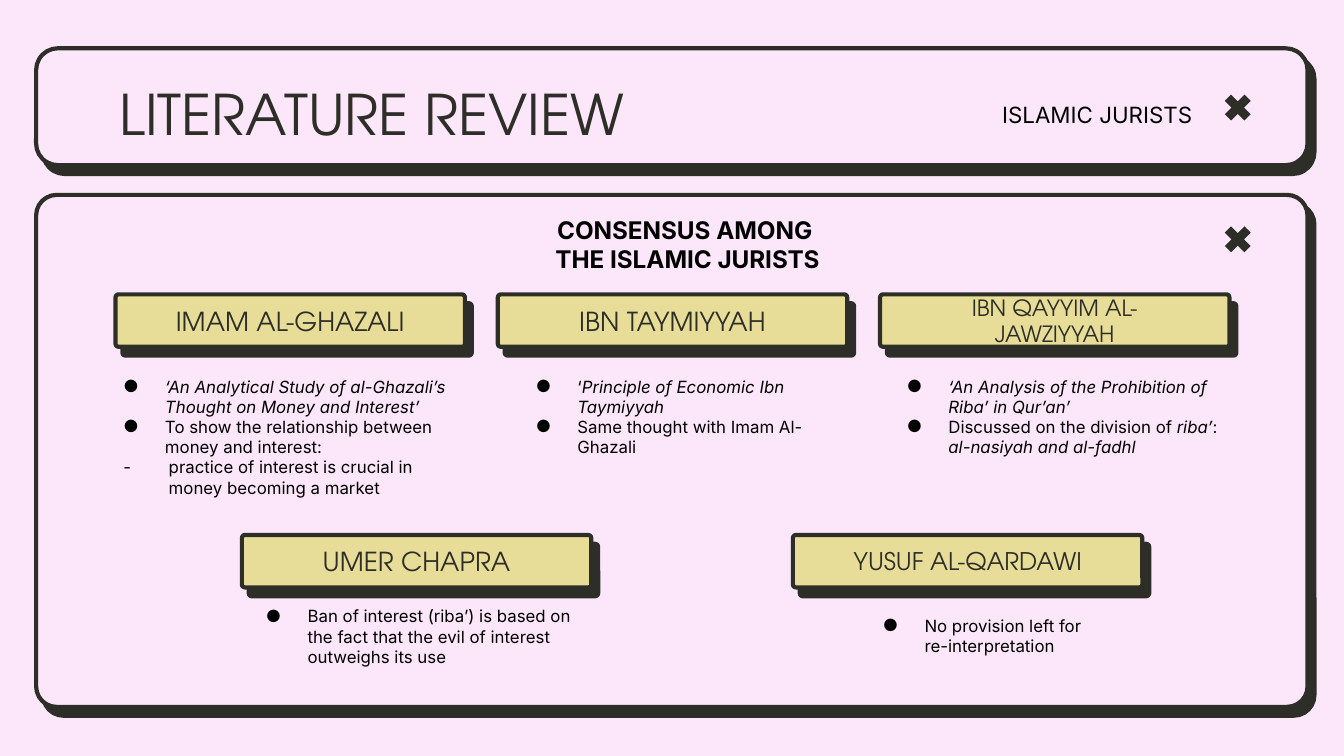
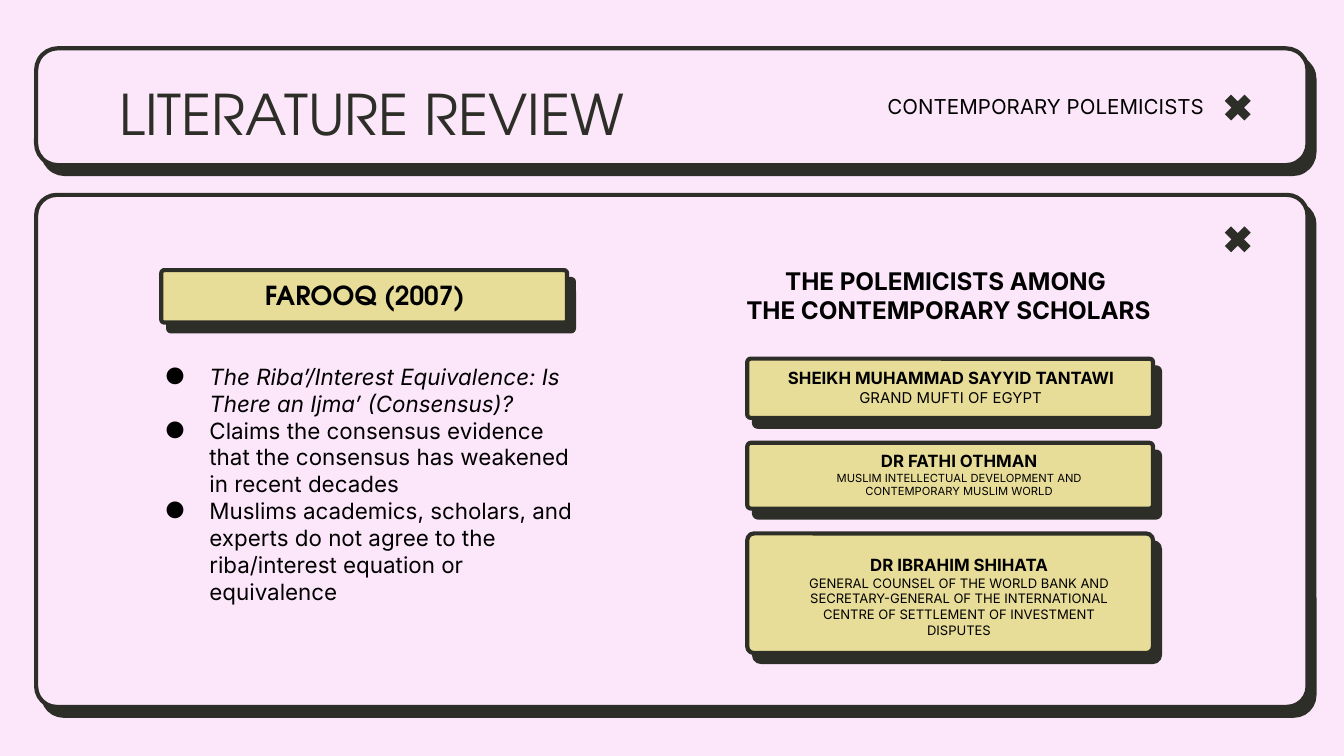
import pptx
import pptx.dml.color
import pptx.enum.shapes
import pptx.enum.text
import pptx.oxml
import pptx.oxml.ns
import pptx.util

Pt = pptx.util.Pt
SHAPES = pptx.enum.shapes.MSO_SHAPE
LEFT = pptx.enum.text.PP_ALIGN.LEFT
CENTER = pptx.enum.text.PP_ALIGN.CENTER
RIGHT = pptx.enum.text.PP_ALIGN.RIGHT
TOP = pptx.enum.text.MSO_ANCHOR.TOP
MIDDLE = pptx.enum.text.MSO_ANCHOR.MIDDLE

PINK, SAND, INK, BLACK = "FCE6FA", "E8DD98", "2D2E27", "000000"
DISPLAY, BODY = "TeX Gyre Adventor", "Inter"
NAMESPACE = pptx.oxml.ns.nsdecls("a")

HEADER_BOX = (19.4, 25.9, 681.1, 62.6)
CONTENT_BOX = (19.4, 104.4, 681.1, 274.3)
NAME_CARD = (187.2, 28.1)
WIDE_CARD = 217.4
COLUMN_STEP = 204.8
SCHOLAR_GAP = 13.3


def colour(code):
    return pptx.dml.color.RGBColor.from_string(code)


def add_shape(page, kind, box, fill, adjustment):
    shape = page.shapes.add_shape(kind, *[Pt(length) for length in box])
    shape.adjustments[0] = adjustment
    shape.fill.solid()
    shape.fill.fore_color.rgb = colour(fill)
    shape.line.fill.background()
    shape.shadow.inherit = False
    return shape


def add_card(page, box, fill=SAND, rounding=0.057):
    card = add_shape(page, SHAPES.ROUNDED_RECTANGLE, box, fill, rounding)
    card.line.color.rgb = colour(INK)
    card.line.width = Pt(2.25)
    effects = card._element.spPr.find(pptx.oxml.ns.qn("a:effectLst"))
    effects.append(pptx.oxml.parse_xml(
        f'<a:outerShdw {NAMESPACE} blurRad="0" dist="{Pt(6)}" dir="3120000" '
        f'algn="bl" rotWithShape="0"><a:srgbClr val="{INK}"/></a:outerShdw>'))


def add_panel(page, box, rounding, cross_drop):
    left, top = box[:2]
    add_card(page, box, PINK, rounding)
    add_shape(page, SHAPES.MATH_MULTIPLY,
              (left + 633.6, top + cross_drop, 20.2, 20.2), INK, 0.235)


def add_text_frame(page, box, anchor=TOP):
    frame = page.shapes.add_textbox(*[Pt(length) for length in box]).text_frame
    frame.word_wrap = True
    frame.vertical_anchor = anchor
    frame.margin_left = frame.margin_right = Pt(7.2)
    frame.margin_top = frame.margin_bottom = Pt(7.2)
    return frame


def next_paragraph(frame, index):
    return frame.add_paragraph() if index else frame.paragraphs[0]


def add_span(para, text, size, style="", font=BODY, ink=BLACK):
    for index, line in enumerate(text.split("\n")):
        if index:
            para.add_line_break()
        span = para.add_run()
        span.text = line
        span.font.size = Pt(size)
        span.font.name = font
        span.font.bold = "b" in style
        span.font.italic = "i" in style
        span.font.color.rgb = colour(ink)


def add_label(page, box, text, size, style="", font=BODY, ink=BLACK,
              align=CENTER, anchor=TOP):
    para = add_text_frame(page, box, anchor).paragraphs[0]
    para.alignment = align
    add_span(para, text, size, style, font, ink)


def add_bullets(page, box, items, size, hang):
    frame = add_text_frame(page, box)
    for index, (mark, spans) in enumerate(items):
        para = next_paragraph(frame, index)
        extra = 2 if mark == "-" else 0
        properties = para._p.get_or_add_pPr()
        properties.set("marL", str(Pt(36 + extra)))
        properties.set("indent", str(Pt(-hang - extra)))
        for element in (f'<a:buClr {NAMESPACE}><a:srgbClr val="{BLACK}"/></a:buClr>',
                        f'<a:buFont {NAMESPACE} typeface="{BODY}"/>',
                        f'<a:buChar {NAMESPACE} char="{mark}"/>'):
            properties.append(pptx.oxml.parse_xml(element))
        for text, style in spans:
            add_span(para, text, size, style)


def add_jurist(page, left, top, name, size, notes_box, notes):
    width, height = NAME_CARD
    shift, drop, notes_width, notes_height = notes_box
    add_card(page, (left, top, width, height))
    add_label(page, (left + 13, top - 2.9, width - 26, height + 5.8), name, size,
              font=DISPLAY, ink=INK, anchor=MIDDLE)
    add_bullets(page, (left + shift, top + drop, notes_width, notes_height),
                notes, 9, 22.3)


def add_scholar(page, box, text_box, name, role, role_size):
    left, top = box[:2]
    shift, drop, width, height = text_box
    add_card(page, box)
    frame = add_text_frame(page, (left + shift, top + drop, width, height))
    for index, (text, size, style) in enumerate([(name, 9, "b"), (role, role_size, "")]):
        para = next_paragraph(frame, index)
        para.alignment = CENTER
        add_span(para, text, size, style)


def add_review_page(deck, topic, topic_box, topic_size):
    page = deck.slides.add_slide(deck.slide_layouts[6])
    page.background.fill.solid()
    page.background.fill.fore_color.rgb = colour(PINK)
    add_panel(page, CONTENT_BOX, 0.04, 13.7)
    add_panel(page, HEADER_BOX, 0.186, 21.6)
    left, top = HEADER_BOX[:2]
    add_label(page, (left + 37.5, top + 9.4, 607, 45.4), "LITERATURE REVIEW", 30,
              font=DISPLAY, ink=INK, align=LEFT)
    shift, drop, width, height = topic_box
    add_label(page, (left + shift, top + drop, width, height), topic, topic_size,
              align=RIGHT)
    return page


def build_jurists(deck):
    page = add_review_page(deck, "ISLAMIC JURISTS", (494.7, 20.9, 131.8, 28.8), 12)
    left, top = CONTENT_BOX[:2]
    add_label(page, (left + 222.5, top + 3.6, 252.7, 47.5),
              "CONSENSUS AMONG \nTHE ISLAMIC JURISTS", 13, "b")
    upper_row = [
        ("IMAM AL-GHAZALI", 14, (-16.6, 36.7, 209.5, 80), [
            ("●", [("‘An Analytical Study of al-Ghazali’s Thought on Money and Interest’", "i")]),
            ("●", [("To show the relationship between money and interest:", "")]),
            ("-", [("practice of interest is crucial in\nmoney becoming a market", "")])]),
        ("IBN TAYMIYYAH", 14, (-0.4, 36.7, 187.2, 58.3), [
            ("●", [("‘", ""), ("Principle of Economic Ibn Taymiyyah", "i")]),
            ("●", [("Same thought with Imam Al-Ghazali", "")])]),
        ("IBN QAYYIM AL-JAWZIYYAH", 12, (-6.5, 36.7, 203, 58.3), [
            ("●", [("‘An Analysis of the Prohibition of Riba’ in Qur’an’", "i")]),
            ("●", [("Discussed on the division of ", ""), ("riba’", "i"), (": ", ""),
                   ("al-nasiyah and al-fadhl", "i")])]),
    ]
    for column, jurist in enumerate(upper_row):
        add_jurist(page, left + 42.5 + column * COLUMN_STEP, top + 53.3, *jurist)
    lower_row = [
        (110.2, "UMER CHAPRA", 14, (-7.9, 30.9, 203, 58.3), [
            ("●", [("Ban of interest (riba’) is based on the fact that the evil of "
                    "interest outweighs its use", "")])]),
        (405.4, "YUSUF AL-QARDAWI", 13, (27.4, 36, 146.2, 36), [
            ("●", [("No provision left for re-interpretation", "")])]),
    ]
    for shift, *jurist in lower_row:
        add_jurist(page, left + shift, top + 182.2, *jurist)


def build_polemicists(deck):
    page = add_review_page(deck, "CONTEMPORARY POLEMICISTS", (404.7, 18, 228.2, 28.1), 11)
    left, top = CONTENT_BOX[:2]
    add_card(page, (left + 67, top + 40.3, WIDE_CARD, 28.1))
    add_label(page, (left + 99.4, top + 38.2, 153.4, 31.7), "FAROOQ (2007)", 14, "b",
              font=DISPLAY)
    add_bullets(page, (left + 49.7, top + 82.8, 252.7, 145.4), [
        ("●", [("The Riba’/Interest Equivalence: Is There an Ijma’ (Consensus)?", "i")]),
        ("●", [("Claims the consensus evidence that the consensus has weakened "
                "in recent decades", "")]),
        ("●", [("Muslims academics, scholars, and experts do not agree to the "
                "riba/interest equation or equivalence", "")])], 12, 23.8)
    add_label(page, (left + 362.2, top + 31, 252.7, 46.1),
              "THE POLEMICISTS AMONG \nTHE CONTEMPORARY SCHOLARS", 13, "b")
    scholars = [
        (31.7, (12.2, -2.2, 193.7, 35.3), "SHEIKH MUHAMMAD SAYYID TANTAWI",
         "GRAND MUFTI OF EGYPT", 8),
        (35.3, (16.6, -2.9, 193.7, 40.3), "DR FATHI OTHMAN",
         "MUSLIM INTELLECTUAL DEVELOPMENT AND CONTEMPORARY MUSLIM WORLD", 6),
        (64.1, (21.6, 4.3, 183.6, 59), "DR IBRAHIM SHIHATA",
         "GENERAL COUNSEL OF THE WORLD BANK AND SECRETARY-GENERAL OF THE "
         "INTERNATIONAL CENTRE OF SETTLEMENT OF INVESTMENT DISPUTES", 7),
    ]
    card_top = top + 87.8
    for height, *scholar in scholars:
        add_scholar(page, (left + 380.9, card_top, WIDE_CARD, height), *scholar)
        card_top += height + SCHOLAR_GAP


def main():
    deck = pptx.Presentation()
    deck.slide_width, deck.slide_height = Pt(720), Pt(405)
    build_jurists(deck)
    build_polemicists(deck)
    deck.save("out.pptx")


if __name__ == "__main__":
    main()
